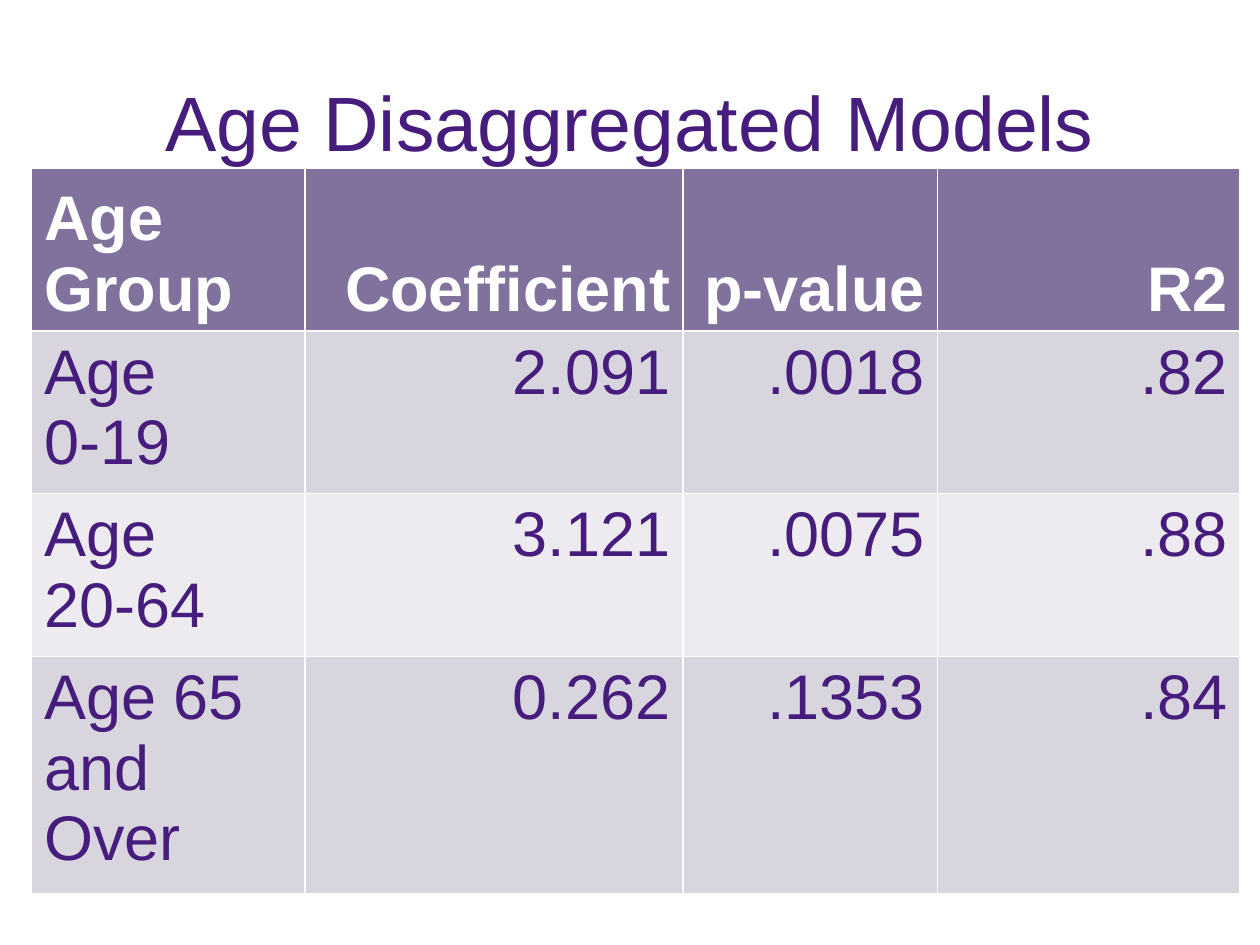
from dataclasses import dataclass

from pptx import Presentation
from pptx.dml.color import RGBColor
from pptx.enum import text
from pptx.util import Cm, Pt


@dataclass(frozen=True)
class Theme:
    font: str = "Arial"
    title_size: Pt = Pt(44)
    table_size: Pt = Pt(36)
    ink: RGBColor = RGBColor(0x46, 0x1D, 0x7C)
    header_ink: RGBColor = RGBColor(0xFF, 0xFF, 0xFF)
    header_fill: RGBColor = RGBColor(0x80, 0x72, 0x9D)
    bands: tuple = (RGBColor(0xED, 0xEB, 0xEF), RGBColor(0xD8, 0xD5, 0xDF))


def set_font(p, size, color, bold=False):
    p.font.name = theme.font
    p.font.size = size
    p.font.bold = bold
    p.font.color.rgb = color


theme = Theme()
rows = [
    ("Age Group", "Coefficient", "p-value", "R2"),
    ("Age\n0-19", "2.091", ".0018", ".82"),
    ("Age\n20-64", "3.121", ".0075", ".88"),
    ("Age 65 and Over", "0.262", ".1353", ".84"),
]
col_widths = [Cm(5.51), Cm(7.62), Cm(5.13), Cm(6.1)]
row_heights = [Cm(3.28), Cm(3.28), Cm(3.28), Cm(4.78)]

prs = Presentation()
prs.slide_width, prs.slide_height = Cm(25.4), Cm(19.05)
s = prs.slides.add_slide(prs.slide_layouts[5])

# Title
title = s.shapes.title
title.left, title.top, title.width, title.height = Cm(1.9), Cm(0.84), Cm(21.6), Cm(3.18)
tf = title.text_frame
tf.text = "Age Disaggregated Models"
tf.auto_size = text.MSO_AUTO_SIZE.NONE
tf.vertical_anchor = text.MSO_ANCHOR.MIDDLE
tf.paragraphs[0].alignment = text.PP_ALIGN.CENTER
set_font(tf.paragraphs[0], theme.title_size, theme.ink)

# Model results
table = s.shapes.add_table(
    len(rows), len(col_widths), Cm(0.64), Cm(3.39), sum(col_widths), sum(row_heights)
).table
for column, width in zip(table.columns, col_widths):
    column.width = width
for row, height in zip(table.rows, row_heights):
    row.height = height

for i, values in enumerate(rows):
    header = i == 0
    for j, value in enumerate(values):
        cell = table.cell(i, j)
        cell.text = value
        cell.vertical_anchor = text.MSO_ANCHOR.BOTTOM if header else text.MSO_ANCHOR.TOP
        cell.fill.solid()
        cell.fill.fore_color.rgb = theme.header_fill if header else theme.bands[i % 2]
        for p in cell.text_frame.paragraphs:
            p.alignment = text.PP_ALIGN.RIGHT if j else text.PP_ALIGN.LEFT
            set_font(p, theme.table_size, theme.header_ink if header else theme.ink, header)

prs.save("out.pptx")
